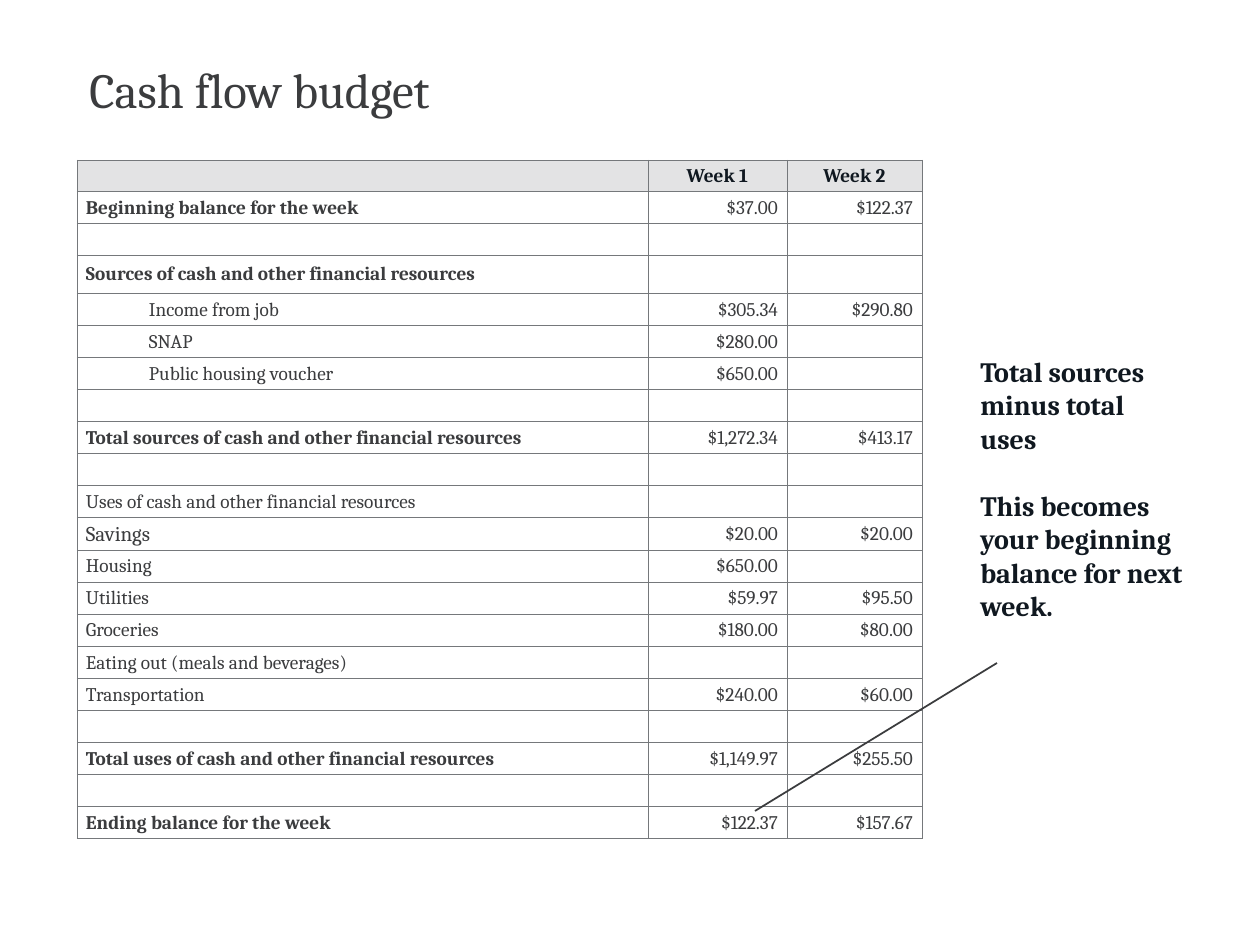
from lxml.etree import SubElement
from pptx import Presentation
from pptx.dml.color import RGBColor
from pptx.enum.shapes import MSO_CONNECTOR
from pptx.enum.text import MSO_ANCHOR, PP_ALIGN
from pptx.oxml.ns import qn
from pptx.util import Pt

SCALE = 914400 / 126
FONT = "Cambria"
INK = RGBColor(0x3B, 0x3C, 0x3E)
DARK = RGBColor(0x10, 0x18, 0x20)
HEAD = RGBColor(0xE3, 0xE3, 0xE4)
RULE = RGBColor(0x75, 0x78, 0x7B)

TITLE = "Cash flow budget"
NOTES = [
    "Total sources minus total uses",
    "This becomes your beginning balance for next week.",
]
BLANK = ("", "", "")
ROWS = [
    ("", "Week 1", "Week 2"),
    ("Beginning balance for the week", "$37.00", "$122.37"),
    BLANK,
    ("Sources of cash and other financial resources", "", ""),
    ("Income from job", "$305.34", "$290.80"),
    ("SNAP", "$280.00", ""),
    ("Public housing voucher", "$650.00", ""),
    BLANK,
    ("Total sources of cash and other financial resources", "$1,272.34", "$413.17"),
    BLANK,
    ("Uses of cash and other financial resources", "", ""),
    ("Savings", "$20.00", "$20.00"),
    ("Housing", "$650.00", ""),
    ("Utilities", "$59.97", "$95.50"),
    ("Groceries", "$180.00", "$80.00"),
    ("Eating out (meals and beverages)", "", ""),
    ("Transportation", "$240.00", "$60.00"),
    BLANK,
    ("Total uses of cash and other financial resources", "$1,149.97", "$255.50"),
    BLANK,
    ("Ending balance for the week", "$122.37", "$157.67"),
]
STRONG = ("Beginning", "Sources", "Total", "Ending")
INDENT = range(4, 7)
SIZES = {"Savings": 12}
COLS = [571, 139, 135]
TOPS = [31, 32, 32, 38]
LEFT, TOP, TALL = 77, 160, 679


def px(num):
    """Turn pixels into EMU."""
    return round(num * SCALE)


def style(para, size, color, bold=False):
    """Format every run of a paragraph."""
    for run in para.runs:
        font = run.font
        font.name, font.size, font.bold = FONT, Pt(size), bold
        font.color.rgb = color


def add_text(slide, box, lines, size, color, bold=False):
    """Add a wrapped text box and return its frame."""
    frame = slide.shapes.add_textbox(*map(px, box)).text_frame
    frame.word_wrap = True
    frame.text = "\n".join(lines)
    for para in frame.paragraphs:
        style(para, size, color, bold)
    return frame


def add_edges(cell):
    """Draw thin rules on all four sides of a cell."""
    props = cell._tc.get_or_add_tcPr()
    for pos, side in enumerate(("lnL", "lnR", "lnT", "lnB")):
        line = props.makeelement(qn(f"a:{side}"), {"w": str(Pt(0.25))})
        fill = SubElement(line, qn("a:solidFill"))
        SubElement(fill, qn("a:srgbClr"), val=str(RULE))
        props.insert(pos, line)


def fill_cell(cell, text, row, col):
    """Write and format one table cell."""
    cell.margin_left = cell.margin_right = px(9)
    cell.margin_top = cell.margin_bottom = 0
    cell.vertical_anchor = MSO_ANCHOR.MIDDLE
    if row:
        cell.fill.background()
    else:
        cell.fill.solid()
        cell.fill.fore_color.rgb = HEAD
    add_edges(cell)
    cell.text_frame.text = text
    para = cell.text_frame.paragraphs[0]
    para.line_spacing = 1.07
    if not row:
        para.alignment = PP_ALIGN.CENTER
    elif col:
        para.alignment = PP_ALIGN.RIGHT
    elif row in INDENT:
        para._p.get_or_add_pPr().set("marL", str(px(63)))
    bold = not row or text.startswith(STRONG)
    style(para, SIZES.get(text, 11), INK if row else DARK, bold)
    if not text:
        SubElement(para._p, qn("a:endParaRPr"), sz="1100")


def add_budget(slide):
    """Add the cash flow table."""
    box = map(px, (LEFT, TOP, sum(COLS), TALL))
    table = slide.shapes.add_table(len(ROWS), len(COLS), *box).table
    table.first_row = table.horz_banding = False
    rest = (TALL - sum(TOPS)) / (len(ROWS) - len(TOPS))
    highs = TOPS + [rest] * (len(ROWS) - len(TOPS))
    for col, wide in zip(table.columns, COLS):
        col.width = px(wide)
    for row, high in zip(table.rows, highs):
        row.height = px(high)
    for row, texts in enumerate(ROWS):
        for col, text in enumerate(texts):
            fill_cell(table.cell(row, col), text, row, col)


def main():
    """Build the slide and save it."""
    deck = Presentation()
    deck.slide_width, deck.slide_height = px(1260), px(945)
    slide = deck.slides.add_slide(deck.slide_layouts[6])
    title = add_text(slide, (LEFT, 38, 1107, 102), [TITLE], 28, INK)
    title.vertical_anchor = MSO_ANCHOR.MIDDLE
    notes = add_text(slide, (968, 348, 228, 317), NOTES, 16, DARK, True)
    notes.paragraphs[1].space_before = Pt(19)
    add_budget(slide)
    ends = map(px, (997, 663, 755, 811))
    line = slide.shapes.add_connector(MSO_CONNECTOR.STRAIGHT, *ends)
    line.line.color.rgb = INK
    line.line.width = Pt(1)
    SubElement(line._element.spPr, qn("a:effectLst"))
    deck.save("out.pptx")


if __name__ == "__main__":
    main()
